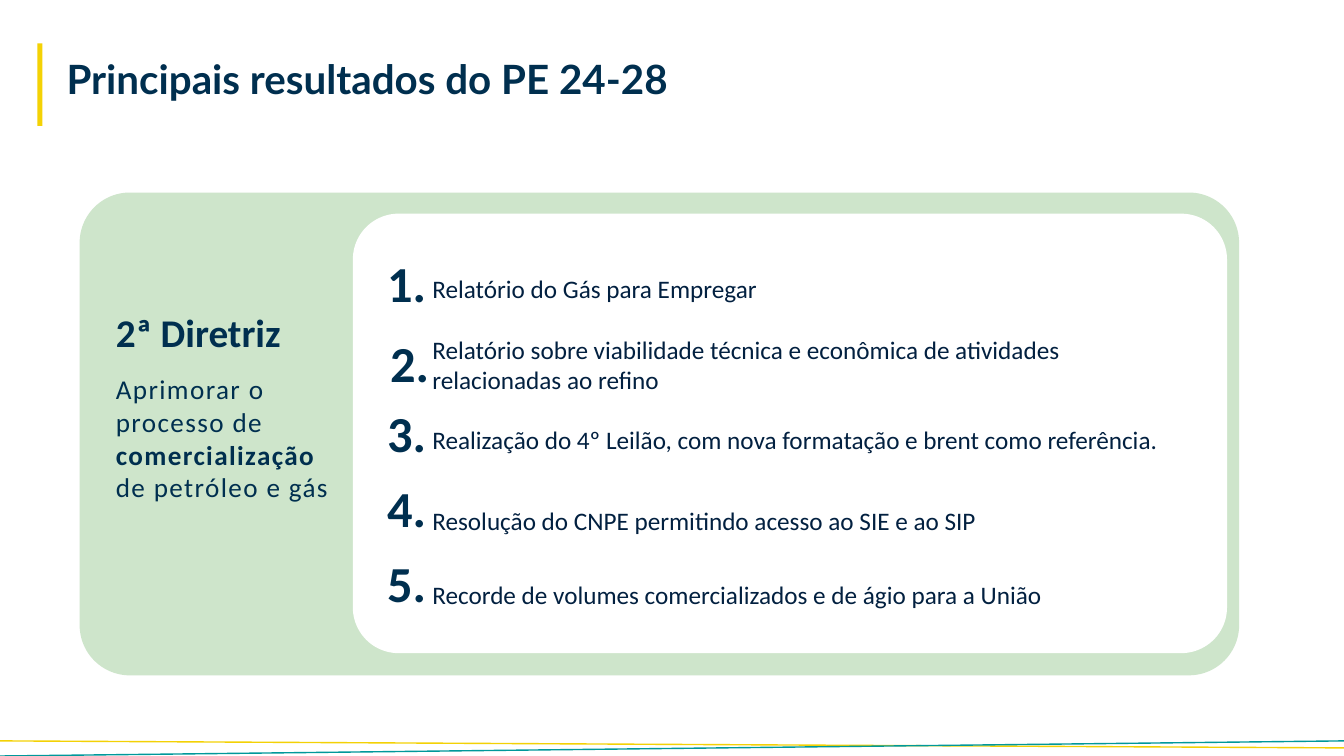
import pptx
import pptx.util
import pptx.dml.color
import pptx.enum.shapes
import pptx.enum.text
import lxml.etree

Inches = pptx.util.Inches
Pt = pptx.util.Pt
RGBColor = pptx.dml.color.RGBColor
MSO_SHAPE = pptx.enum.shapes.MSO_SHAPE

NAVY = RGBColor(0x00, 0x2F, 0x4F)
INK = RGBColor(0x02, 0x20, 0x40)
YELLOW = RGBColor(0xF4, 0xD2, 0x05)
GOLD = RGBColor(0xF3, 0xD1, 0x05)
TEAL = RGBColor(0x00, 0x98, 0x9A)
GREEN = RGBColor(0xCE, 0xE5, 0xCB)
WHITE = RGBColor(0xFF, 0xFF, 0xFF)


def add_text(slide, left, top, width, height):
    box = slide.shapes.add_textbox(Inches(left), Inches(top), Inches(width), Inches(height))
    box.text_frame.word_wrap = True
    return box.text_frame.paragraphs[0]


def add_run(paragraph, text, size, color, bold=False, font="Calibri"):
    run = paragraph.add_run()
    run.text = text
    run.font.name = font
    run.font.size = Pt(size)
    run.font.bold = bold
    run.font.color.rgb = color
    return run


deck = pptx.Presentation()
deck.slide_width = Inches(13.33)
deck.slide_height = Inches(7.5)
slide = deck.slides.add_slide(deck.slide_layouts[5])

title = slide.shapes.title
title.left, title.top, title.width, title.height = (Inches(n) for n in (0.56, 0.54, 9.95, 0.7))
title.text_frame.vertical_anchor = pptx.enum.text.MSO_ANCHOR.TOP
title.text_frame.auto_size = pptx.enum.text.MSO_AUTO_SIZE.NONE
heading = title.text_frame.paragraphs[0]
heading.alignment = pptx.enum.text.PP_ALIGN.LEFT
heading.line_spacing = 0.9
add_run(heading, "Principais resultados do PE 24-28", 28.8, NAVY, True, "Lato")

for start_y, end_y, color in [(7.42, 7.35, GOLD), (7.35, 7.5, TEAL)]:
    wave = slide.shapes.add_connector(
        pptx.enum.shapes.MSO_CONNECTOR.STRAIGHT,
        Inches(13.33), Inches(start_y), Inches(0), Inches(end_y))
    wave.line.color.rgb = color
    wave.line.width = Pt(1)
    lxml.etree.SubElement(wave._element.spPr, pptx.oxml.ns.qn("a:effectLst"))

panels = [
    (MSO_SHAPE.RECTANGLE, 0.37, 0.43, 0.05, 0.82, YELLOW),
    (MSO_SHAPE.ROUNDED_RECTANGLE, 0.79, 1.91, 11.5, 4.79, GREEN),
    (MSO_SHAPE.ROUNDED_RECTANGLE, 3.5, 2.12, 8.67, 4.36, WHITE),
]
for kind, left, top, width, height, color in panels:
    panel = slide.shapes.add_shape(kind, Inches(left), Inches(top), Inches(width), Inches(height))
    panel.shadow.inherit = False
    panel.fill.solid()
    panel.fill.fore_color.rgb = color
    panel.line.fill.background()
    if kind == MSO_SHAPE.ROUNDED_RECTANGLE:
        panel.adjustments[0] = 0.104

guideline = add_text(slide, 1.05, 3.01, 2.3, 0.57)
add_run(guideline, "2ª Diretriz", 28, NAVY, True)

goal = add_text(slide, 1.05, 3.65, 2.36, 1.73)
for text, bold in [("Aprimorar o processo de ", False),
                   ("comercialização", True),
                   (" de petróleo e gás", False)]:
    run = add_run(goal, text, 19.4, NAVY, bold)
    run.font._element.set("spc", "100")

results = [
    (3.74, 2.45, 2.66, 1, "Relatório do Gás para Empregar"),
    (3.77, 3.25, 3.27, 1, "Relatório sobre viabilidade técnica e econômica de atividades relacionadas ao refino"),
    (3.74, 3.94, 4.16, 1, "Realização do 4º Leilão, com nova formatação e brent como referência."),
    (3.74, 4.68, 4.81, 1.5, "Resolução do CNPE permitindo acesso ao SIE e ao SIP"),
    (3.74, 5.43, 5.55, 1.5, "Recorde de volumes comercializados e de ágio para a União"),
]
for number, (number_left, number_top, top, spacing, text) in enumerate(results, 1):
    marker = add_text(slide, number_left, number_top, 0.65, 0.71)
    add_run(marker, f"{number}.", 36, NAVY, True)
    result = add_text(slide, 4.19, top, 7.5, 0.5)
    result.line_spacing = float(spacing)
    add_run(result, text, 18, INK)

deck.save("out.pptx")
